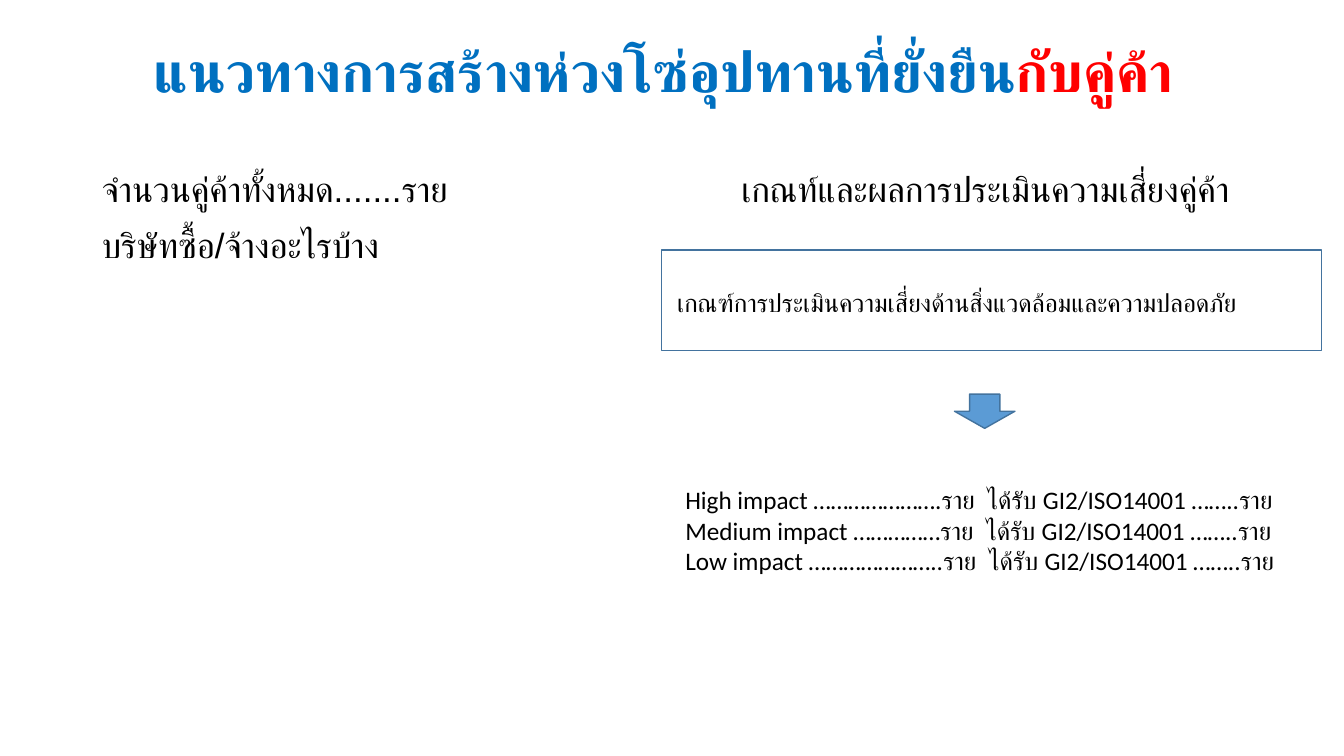
import pptx
import pptx.util
import pptx.dml.color
import pptx.enum.shapes
import pptx.enum.text
from dataclasses import dataclass
from lxml import etree

Pt = pptx.util.Pt
RGB = pptx.dml.color.RGBColor.from_string
ALIGN = pptx.enum.text.PP_ALIGN
ANCHOR = pptx.enum.text.MSO_ANCHOR
FIT = pptx.enum.text.MSO_AUTO_SIZE
SHAPE = pptx.enum.shapes.MSO_SHAPE


@dataclass(frozen=True)
class Theme:
    blue: str = "0070C0"
    red: str = "FF0000"
    black: str = "000000"
    outline: str = "43739E"
    arrow: str = "5B9BD5"
    title: int = 40
    body: int = 25
    small: int = 18


theme = Theme()

TITLE = [[("แนวทางการสร้างห่วงโซ่อุปทานที่ยั่งยืน", theme.blue), ("กับคู่ค้า", theme.red)]]
SUPPLIERS = ["จำนวนคู่ค้าทั้งหมด.......ราย", "บริษัทซื้อ/จ้างอะไรบ้าง"]
HEADING = ["เกณท์และผลการประเมินความเสี่ยงคู่ค้า"]
CRITERIA = ["เกณฑ์การประเมินความเสี่ยงด้านสิ่งแวดล้อมและความปลอดภัย"]
CERTIFIED = "ราย  ได้รับ GI2/ISO14001 ……..ราย"
IMPACTS = [
    f"{level} impact {dots}{CERTIFIED}"
    for level, dots in [("High", "…………………."), ("Medium", "……………"), ("Low", "…………………..")]
]

TITLE_BOX = (3.6, 16.6, 941, 72.7)
SUPPLIERS_BOX = (33.8, 115.9, 333.4, 87.1)
HEADING_BOX = (484.6, 115.9, 438.5, 37.4)
CRITERIA_BOX = (472.3, 178.6, 471.6, 72)
CRITERIA_TEXT_BOX = (476.6, 201.6, 468, 28.8)
ARROW_BOX = (681.8, 281.5, 43.2, 24.5)
IMPACTS_BOX = (482.4, 342.7, 462.2, 72.7)
SUPPLIERS_INDENT = 31.7


def place(sp, box):
    sp.left, sp.top, sp.width, sp.height = map(Pt, box)


def write(sp, lines, size, font="Calibri", bold=False, align=ALIGN.LEFT,
          anchor=ANCHOR.TOP, wrap=True, before=0, spacing=1.0, level=0):
    tf = sp.text_frame
    tf.word_wrap = wrap
    tf.auto_size = FIT.NONE
    tf.vertical_anchor = anchor
    for i, line in enumerate(lines):
        p = tf.add_paragraph() if i else tf.paragraphs[0]
        p.alignment, p.level = align, level
        p.space_before, p.line_spacing = Pt(before), spacing
        for text, color in [(line, theme.black)] if isinstance(line, str) else line:
            r = p.add_run()
            r.text = text
            r.font.name, r.font.size, r.font.bold = font, Pt(size), bold
            r.font.color.rgb = RGB(color)


def add_text(s, box, lines, size, **fmt):
    sp = s.shapes.add_textbox(*map(Pt, box))
    write(sp, lines, size, **fmt)


def add_outlined(s, kind, box, fill=None):
    sp = s.shapes.add_shape(kind, *map(Pt, box))
    sp.shadow.inherit = False
    if fill:
        sp.fill.solid()
        sp.fill.fore_color.rgb = RGB(fill)
    else:
        sp.fill.background()
    sp.line.color.rgb = RGB(theme.outline)
    sp.line.width = Pt(1)


def remove_bullets(sp, indent):
    for p in sp.text_frame.paragraphs:
        pPr = p._p.get_or_add_pPr()
        pPr.set("marL", str(Pt(indent)))
        pPr.set("indent", "0")
        etree.SubElement(pPr, pptx.oxml.ns.qn("a:buNone"))


def main():
    prs = pptx.Presentation()
    prs.slide_width, prs.slide_height = Pt(960), Pt(540)
    s = prs.slides.add_slide(prs.slide_layouts[1])

    title, suppliers = s.shapes.title, s.placeholders[1]
    place(title, TITLE_BOX)
    write(title, TITLE, theme.title, font="Arial", bold=True, align=ALIGN.CENTER,
          anchor=ANCHOR.MIDDLE, spacing=0.9)
    place(suppliers, SUPPLIERS_BOX)
    write(suppliers, SUPPLIERS, theme.body, font="Arial", before=10, level=1)
    remove_bullets(suppliers, SUPPLIERS_INDENT)

    add_text(s, HEADING_BOX, HEADING, theme.body, align=ALIGN.CENTER)
    add_outlined(s, SHAPE.RECTANGLE, CRITERIA_BOX)
    add_text(s, CRITERIA_TEXT_BOX, CRITERIA, theme.small, wrap=False)
    add_outlined(s, SHAPE.DOWN_ARROW, ARROW_BOX, fill=theme.arrow)
    add_text(s, IMPACTS_BOX, IMPACTS, theme.small)

    prs.save("out.pptx")


if __name__ == "__main__":
    main()
